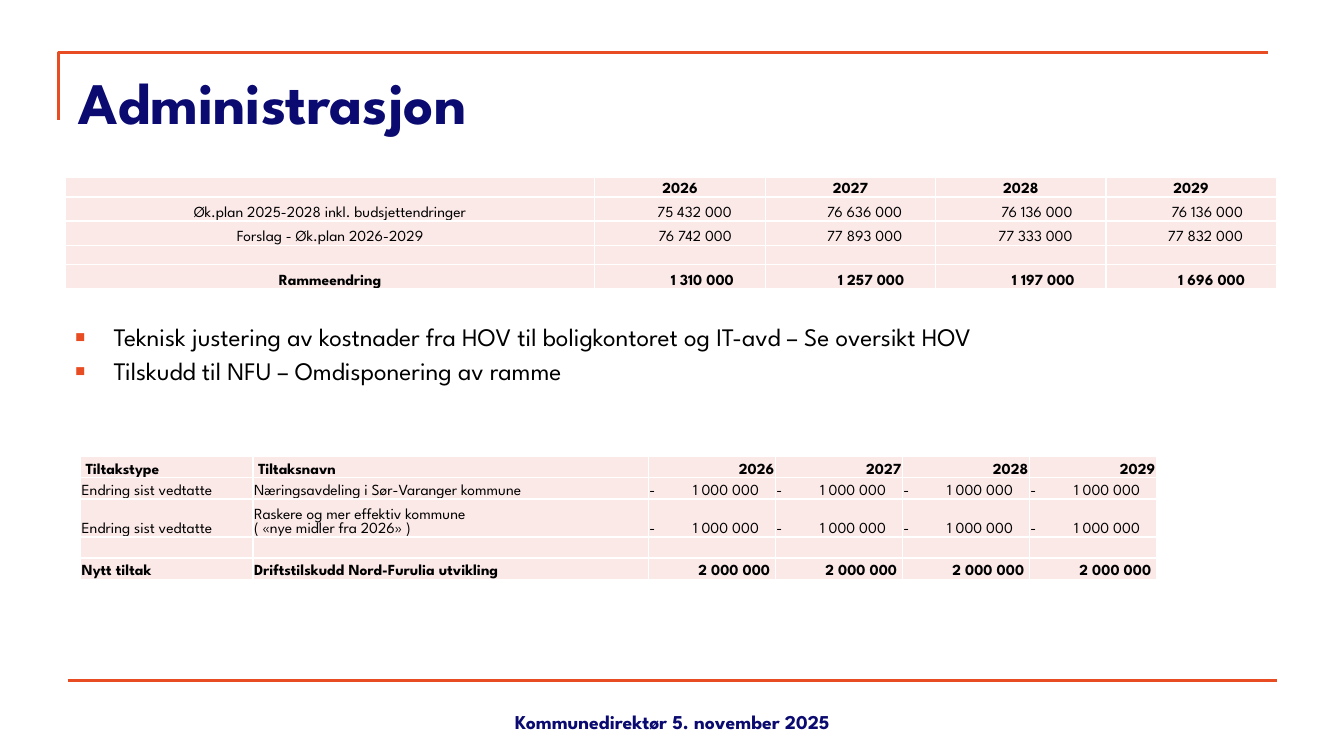
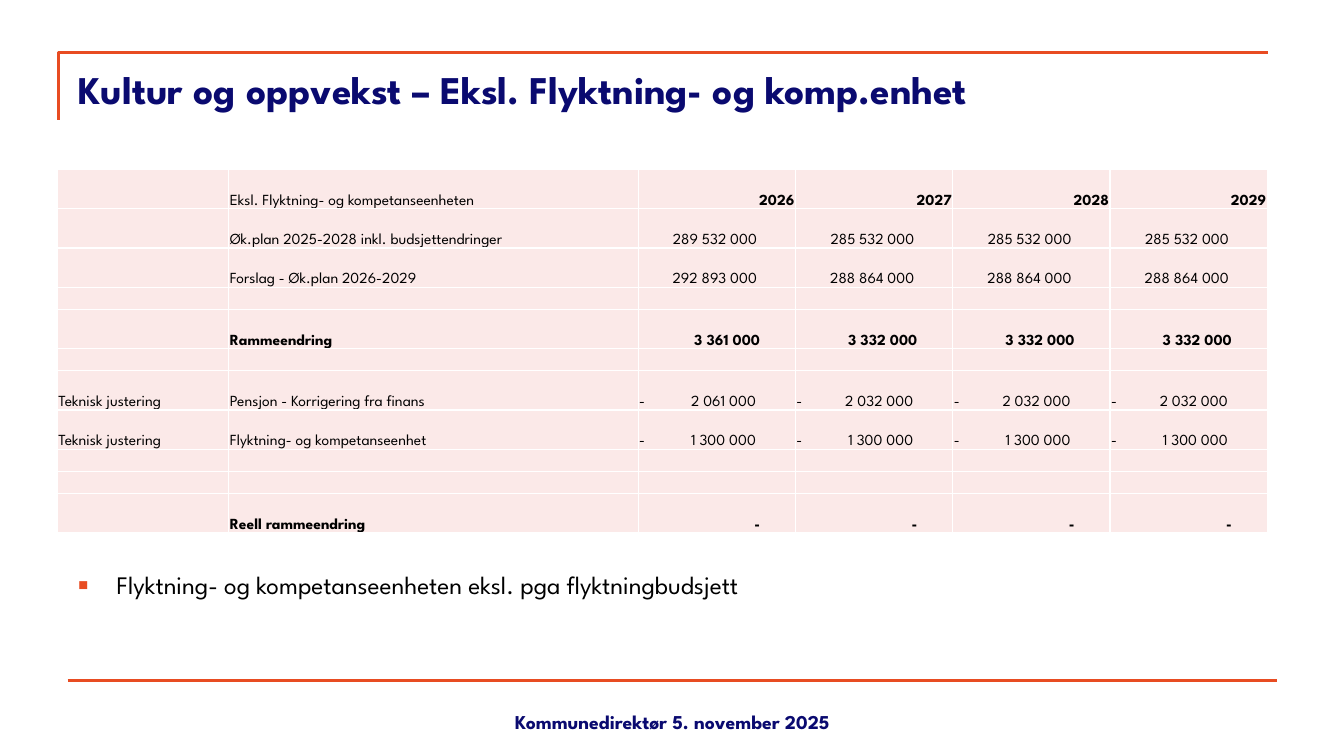
from lxml import etree
from pptx import Presentation
from pptx.dml.color import RGBColor
from pptx.enum.shapes import MSO_CONNECTOR
from pptx.enum.text import MSO_ANCHOR, PP_ALIGN
from pptx.oxml.ns import qn
from pptx.util import Inches, Pt

FONT = "League Spartan"
ORANGE, NAVY, BLACK, WHITE, PINK = "E84C22", "0A0A70", "000000", "FFFFFF", "FBE9E8"
TABLE_SIZE = 11
YEARS = ["2026", "2027", "2028", "2029"]
LEFT, CENTER, RIGHT = PP_ALIGN.LEFT, PP_ALIGN.CENTER, PP_ALIGN.RIGHT


def color(hex_value):
    return RGBColor.from_string(hex_value)


def add_run(paragraph, text, size, hex_value=BLACK, bold=False):
    run = paragraph.add_run()
    run.text = text
    font = run.font
    font.name, font.size, font.bold = FONT, Pt(size), bold
    font.color.rgb = color(hex_value)


def add_text_frame(slide, left, top, width, height, anchor=MSO_ANCHOR.TOP):
    box = slide.shapes.add_textbox(Inches(left), Inches(top), Inches(width), Inches(height))
    frame = box.text_frame
    frame.word_wrap = True
    frame.vertical_anchor = anchor
    return frame


def style_line(shape):
    shape.line.color.rgb = color(ORANGE)
    shape.line.width = Pt(2.25)


def add_frame_lines(slide):
    """Corner line above the title and rule above the footer."""
    left, top, right, bottom = 0.58, 0.52, 12.58, 1.19
    builder = slide.shapes.build_freeform(Inches(left), Inches(bottom))
    builder.add_line_segments([(Inches(left), Inches(top)), (Inches(right), Inches(top))], close=False)
    corner = builder.convert_to_shape()
    corner.shadow.inherit = False
    corner.fill.background()
    style_line(corner)

    rule = slide.shapes.add_connector(
        MSO_CONNECTOR.STRAIGHT, Inches(0.67), Inches(6.75), Inches(12.67), Inches(6.75))
    style_line(rule)
    etree.SubElement(rule._element.spPr, qn("a:effectLst"))


def add_base_slide(presentation, title, title_size):
    slide = presentation.slides.add_slide(presentation.slide_layouts[6])
    add_frame_lines(slide)
    title_frame = add_text_frame(slide, 0.68, 0.6, 12, 1.08)
    add_run(title_frame.paragraphs[0], title, title_size, NAVY, True)
    footer = add_text_frame(slide, 4.56, 6.83, 4.22, 0.5, MSO_ANCHOR.BOTTOM)
    footer.paragraphs[0].alignment = CENTER
    add_run(footer.paragraphs[0], "Kommunedirektør 5. november 2025", 14, NAVY, True)
    return slide


def add_bullets(slide, left, top, items):
    frame = add_text_frame(slide, left, top, 12, 0.4 * len(items))
    frame.margin_top = 0
    for index, item in enumerate(items):
        paragraph = frame.paragraphs[0] if index == 0 else frame.add_paragraph()
        properties = paragraph._p.get_or_add_pPr()
        properties.set("marL", str(Inches(0.38)))
        properties.set("indent", str(-Inches(0.38)))
        bullet_color = etree.SubElement(properties, qn("a:buClr"))
        etree.SubElement(bullet_color, qn("a:srgbClr"), val=ORANGE)
        etree.SubElement(properties, qn("a:buSzPct"), val="65000")
        etree.SubElement(properties, qn("a:buFont"), typeface="Arial")
        etree.SubElement(properties, qn("a:buChar"), char="■")
        if index:
            paragraph.space_before = Pt(2.8)
        add_run(paragraph, item, 18)


def set_borders(cell):
    properties = cell._tc.get_or_add_tcPr()
    for position, side in enumerate(("lnL", "lnR", "lnT", "lnB")):
        line = etree.Element(qn(f"a:{side}"), w=str(Pt(1)))
        fill = etree.SubElement(line, qn("a:solidFill"))
        etree.SubElement(fill, qn("a:srgbClr"), val=WHITE)
        properties.insert(position, line)


def add_tab_stop(paragraph, position):
    tabs = etree.SubElement(paragraph._p.get_or_add_pPr(), qn("a:tabLst"))
    etree.SubElement(tabs, qn("a:tab"), pos=str(Inches(position)), algn="r")


def fill_cell(cell, text, align, bold, right_margin, tab):
    cell.fill.solid()
    cell.fill.fore_color.rgb = color(PINK)
    set_borders(cell)
    cell.vertical_anchor = MSO_ANCHOR.BOTTOM
    cell.margin_left = cell.margin_top = Inches(0.01)
    cell.margin_right, cell.margin_bottom = Inches(right_margin), 0
    for index, line in enumerate(text.split("\n")):
        paragraph = cell.text_frame.paragraphs[0] if index == 0 else cell.text_frame.add_paragraph()
        paragraph.alignment = align
        if "\t" in line:
            add_tab_stop(paragraph, tab)
        if line:
            add_run(paragraph, line, TABLE_SIZE, bold=bold)
        else:
            etree.SubElement(paragraph._p, qn("a:endParaRPr"), sz=str(TABLE_SIZE * 100))


def add_budget_table(slide, left, top, widths, rows, label_align=LEFT, year_align=RIGHT,
                     margin=0.01, bold_margin=0.01, tab=1):
    """Each row is (height, labels, four yearly values, bold labels, bold values)."""
    table_shape = slide.shapes.add_table(
        len(rows), len(widths), Inches(left), Inches(top),
        Inches(sum(widths)), Inches(sum(row[0] for row in rows)))
    table = table_shape.table
    table.first_row = table.horz_banding = False
    for column, width in zip(table.columns, widths):
        column.width = Inches(width)
    for row_index, (height, labels, values, bold_labels, bold_values) in enumerate(rows):
        table.rows[row_index].height = Inches(height)
        for column_index, text in enumerate(labels + values):
            cell = table.cell(row_index, column_index)
            if column_index < len(labels):
                fill_cell(cell, text, label_align, bold_labels, 0.01, tab)
            elif values is YEARS:
                fill_cell(cell, text, year_align, True, 0.01, tab)
            elif "\t" in text:
                fill_cell(cell, text, LEFT, bold_values, 0.01, tab)
            else:
                fill_cell(cell, text, RIGHT, bold_values, bold_margin if bold_values else margin, tab)


def row(height, labels, values, bold=False):
    return height, labels, values, bold, bold


def empty_row(height, label_count):
    return row(height, [""] * label_count, [""] * len(YEARS))


def add_administration_slide(presentation):
    slide = add_base_slide(presentation, "Administrasjon", 42)
    add_budget_table(slide, 0.65, 1.76, [5.25] + [1.69] * 4, [
        row(0.18, [""], YEARS, True),
        row(0.24, ["Øk.plan 2025-2028 inkl. budsjettendringer"],
            ["75 432 000", "76 636 000", "76 136 000", "76 136 000"]),
        row(0.24, ["Forslag - Øk.plan 2026-2029"],
            ["76 742 000", "77 893 000", "77 333 000", "77 832 000"]),
        empty_row(0.18, 1),
        row(0.24, ["Rammeendring"], ["1 310 000", "1 257 000", "1 197 000", "1 696 000"], True),
    ], label_align=CENTER, year_align=CENTER, margin=0.33, bold_margin=0.31)
    add_bullets(slide, 0.65, 3.19, [
        "Teknisk justering av kostnader fra HOV til boligkontoret og IT-avd – Se oversikt HOV",
        "Tilskudd til NFU – Omdisponering av ramme",
    ])
    cut = ["-\t1 000 000"] * 4
    add_budget_table(slide, 0.8, 4.53, [1.71, 3.92] + [1.26] * 4, [
        row(0.21, ["\u00a0Tiltakstype", "\u00a0Tiltaksnavn"], YEARS, True),
        row(0.21, ["Endring sist vedtatte", "Næringsavdeling i Sør-Varanger kommune"], cut),
        row(0.29, ["Endring sist vedtatte",
                   "Raskere og mer effektiv kommune\n( «nye midler fra 2026» )"], cut),
        empty_row(0.21, 2),
        row(0.21, ["Nytt tiltak", "Driftstilskudd Nord-Furulia utvikling"], ["2 000 000"] * 4, True),
    ], bold_margin=0.05, tab=1.09)


def add_culture_slide(presentation):
    slide = add_base_slide(presentation, "Kultur og oppvekst – Eksl. Flyktning- og komp.enhet", 28)
    add_bullets(slide, 0.68, 5.65, ["Flyktning- og kompetanseenheten eksl. pga flyktningbudsjett"])
    tall, low = 0.39, 0.22
    add_budget_table(slide, 0.57, 1.68, [1.7, 4.06] + [1.56] * 4, [
        (tall, ["", "Eksl. Flyktning- og kompetanseenheten"], YEARS, False, True),
        row(tall, ["", "Øk.plan 2025-2028 inkl. budsjettendringer"],
            ["289 532 000"] + ["285 532 000"] * 3),
        row(tall, ["", "Forslag - Øk.plan 2026-2029"], ["292 893 000"] + ["288 864 000"] * 3),
        empty_row(low, 2),
        row(tall, ["", "Rammeendring"], ["3 361 000"] + ["3 332 000"] * 3, True),
        empty_row(low, 2),
        row(tall, ["Teknisk justering", "Pensjon - Korrigering fra finans"],
            ["-\t2 061 000"] + ["-\t2 032 000"] * 3),
        row(tall, ["Teknisk justering", "Flyktning- og kompetanseenhet"], ["-\t1 300 000"] * 4),
        empty_row(low, 2),
        empty_row(low, 2),
        row(tall, ["", "Reell rammeendring"], ["-"] * 4, True),
    ], margin=0.38, bold_margin=0.35, tab=1.16)


def main():
    presentation = Presentation()
    presentation.slide_width, presentation.slide_height = Inches(13.33), Inches(7.5)
    add_administration_slide(presentation)
    add_culture_slide(presentation)
    presentation.save("out.pptx")


if __name__ == "__main__":
    main()
